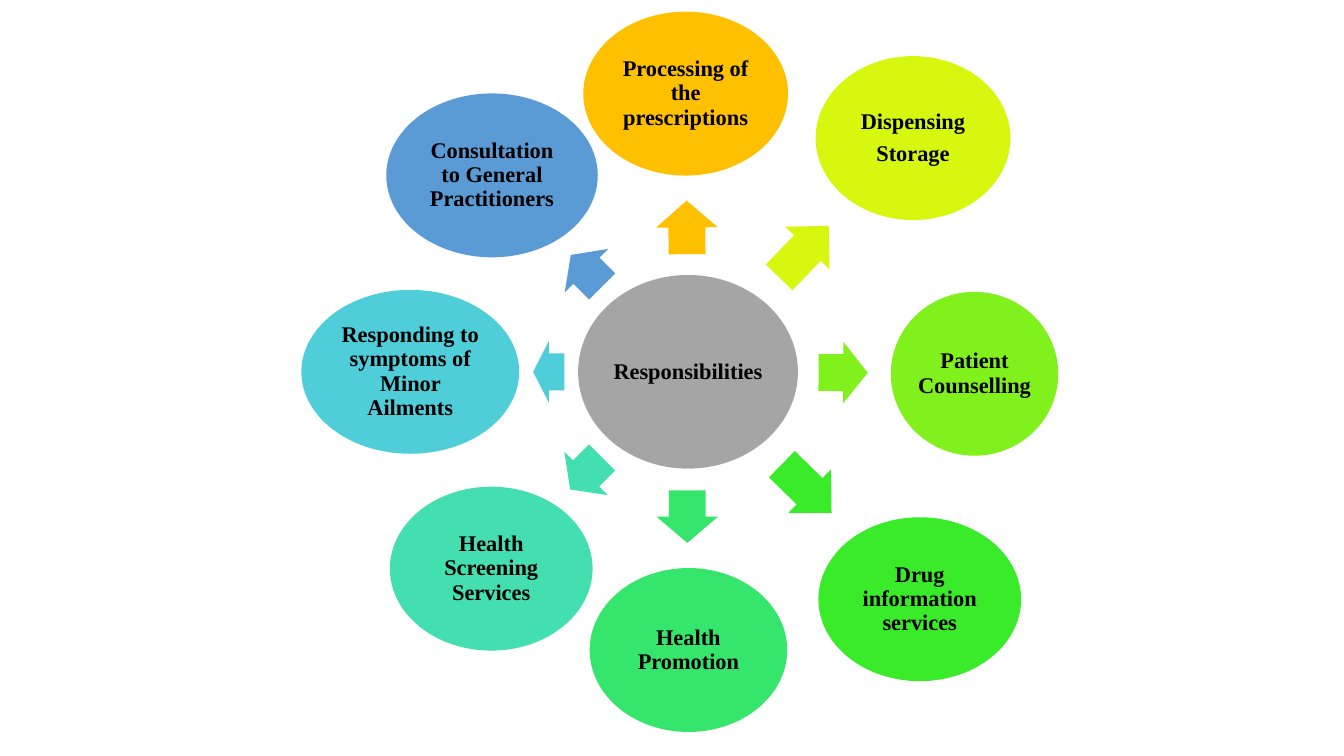
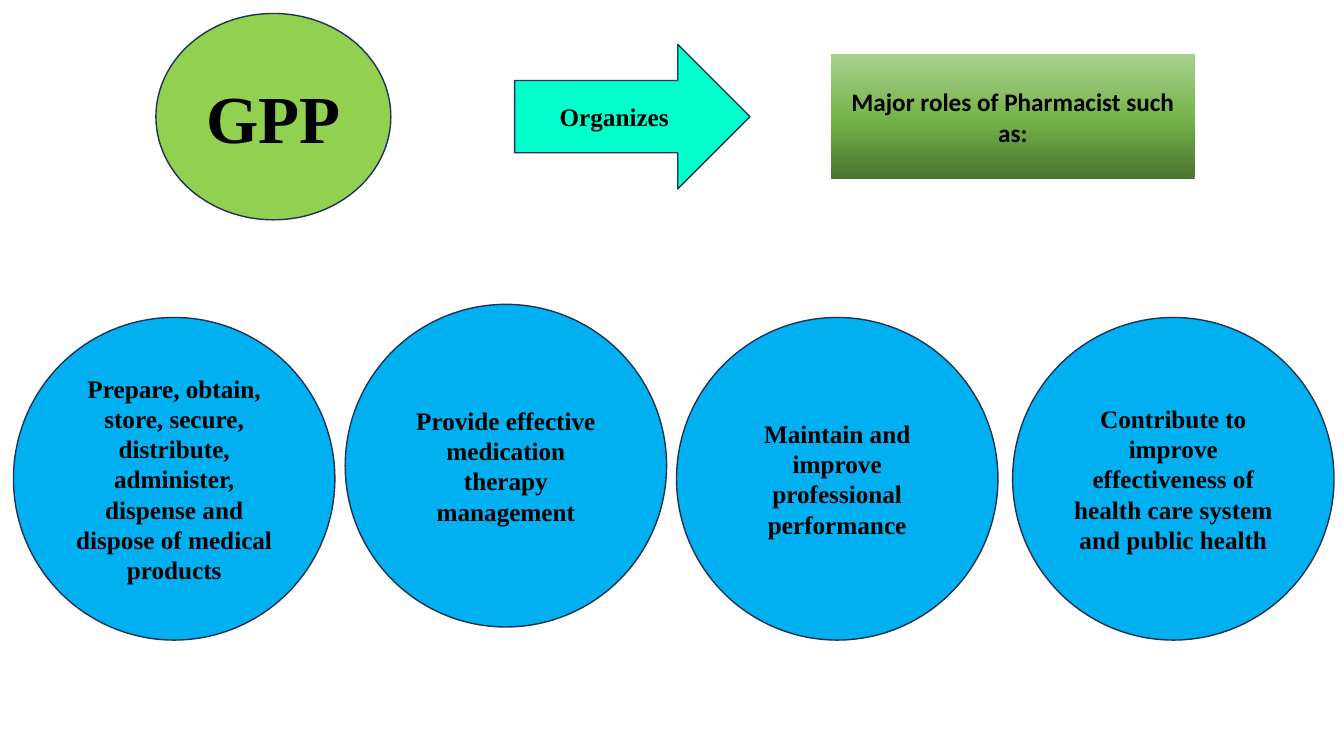
from copy import deepcopy

from pptx import Presentation
from pptx.dml.color import RGBColor
from pptx.enum.shapes import MSO_SHAPE as Preset
from pptx.enum.text import MSO_ANCHOR as Anchor, PP_ALIGN as Align
from pptx.oxml.ns import qn
from pptx.util import Cm, Pt

# Shared look
SERIF = "Times New Roman"
SANS = "Calibri"
BLACK = RGBColor(0x00, 0x00, 0x00)
NAVY = RGBColor(0x1E, 0x32, 0x56)
GREY = RGBColor(0xA5, 0xA5, 0xA5)
AMBER = RGBColor(0xFF, 0xC0, 0x00)
YELLOW = RGBColor(0xD7, 0xF8, 0x0E)
LIME = RGBColor(0x80, 0xF1, 0x1C)
GREEN = RGBColor(0x39, 0xEB, 0x29)
EMERALD = RGBColor(0x36, 0xE5, 0x6C)
TEAL = RGBColor(0x43, 0xDF, 0xB0)
CYAN = RGBColor(0x4F, 0xCE, 0xDA)
BLUE = RGBColor(0x5B, 0x9B, 0xD5)
LEAF = RGBColor(0x92, 0xD0, 0x50)
MINT = RGBColor(0x00, 0xFF, 0xCC)
SKY = RGBColor(0x00, 0xB0, 0xF0)
ROLE_GRADIENT = [
    (0, RGBColor(0x4B, 0x74, 0x30)),
    (0.48, RGBColor(0x74, 0xB3, 0x49)),
    (1, RGBColor(0xA9, 0xD1, 0x8E)),
]

# Responsibilities ring, in cm: text, colour, (centre x, centre y, width),
# then its arrow as (centre x, centre y, length, rotation in degrees)
HUB_CENTRE = (17.34, 9.37)
HUB_SIZE = (5.54, 4.88)
DUTY_HEIGHT = 4.13
ARROW_WIDTH = 1.55
DUTIES = [
    ("Processing of the prescriptions", AMBER,
     (17.28, 2.36, 5.16), (17.31, 5.73, 1.35, 269.6)),
    ("Dispensing\nStorage", YELLOW,
     (23.01, 3.48, 4.91), (20.26, 6.34, 1.8, 313.9)),
    ("Patient Counselling", LIME,
     (24.56, 9.42, 4.22), (21.25, 9.39, 1.24, 0.4)),
    ("Drug information services", GREEN,
     (23.18, 15.1, 5.11), (20.33, 12.31, 1.75, 44.4)),
    ("Health Promotion", EMERALD,
     (17.35, 16.38, 4.98), (17.32, 13.02, 1.32, 90)),
    ("Health Screening Services", TEAL,
     (12.38, 14.33, 5.11), (14.77, 11.93, 1.14, 135)),
    ("Responding to symptoms of Minor Ailments", CYAN,
     (10.34, 9.37, 5.49), (13.83, 9.37, 0.79, 180)),
    ("Consultation to General Practitioners", BLUE,
     (12.4, 4.42, 5.33), (14.78, 6.82, 1.12, 225)),
]

# Pharmacist roles: left and top in cm, text
ROLE_SIZE = (8.1, 8.13)
ROLES = [
    (0.34, 8, "Prepare, obtain, store, secure, distribute, administer, "
              "dispense and dispose of medical products"),
    (8.7, 7.67, "Provide effective medication therapy management"),
    (17.05, 8, "Maintain and improve professional performance"),
    (25.52, 8, "Contribute to improve effectiveness of health care system "
               "and public health"),
]


def add_box(page, preset, left, top, width, height, colour=None, line=None):
    """Add a flat preset shape; lengths are in cm."""
    box = page.shapes.add_shape(
        preset, Cm(left), Cm(top), Cm(width), Cm(height))
    box.shadow.inherit = False
    if colour is not None:
        box.fill.solid()
        box.fill.fore_color.rgb = colour
    if line is None:
        box.line.fill.background()
    else:
        box.line.color.rgb = line
        box.line.width = Pt(1)
    return box


def add_centred(page, preset, centre, size, colour):
    left, top = (c - s / 2 for c, s in zip(centre, size))
    return add_box(page, preset, left, top, *size, colour)


def write(box, text, size, font=SERIF):
    """Fill a shape with bold, centred black text, one paragraph a line."""
    frame = box.text_frame
    frame.word_wrap = True
    frame.vertical_anchor = Anchor.MIDDLE
    frame.text = text
    for para in frame.paragraphs:
        para.alignment = Align.CENTER
        para.font.name = font
        para.font.size = Pt(size)
        para.font.bold = True
        para.font.color.rgb = BLACK


def add_bubble(page, text, centre, size, colour):
    """Add an ellipse of the ring with tight insets and line spacing."""
    bubble = add_centred(page, Preset.OVAL, centre, size, colour)
    write(bubble, text, 16)
    frame = bubble.text_frame
    frame.margin_left = frame.margin_right = Cm(0.06)
    frame.margin_top = frame.margin_bottom = Cm(0.06)
    for para in frame.paragraphs:
        para.line_spacing = 0.9
        para.space_after = Pt(5.6)


def add_ring_arrow(page, x, y, length, rotation, colour):
    arrow = add_centred(
        page, Preset.RIGHT_ARROW, (x, y), (length, ARROW_WIDTH), colour)
    arrow.adjustments[0] = 0.6
    arrow.adjustments[1] = 0.5
    arrow.rotation = rotation


def fill_gradient(box, stops, angle):
    box.fill.gradient()
    box.fill.gradient_angle = angle
    # The default gradient has two stops: add the missing ones
    first = box.fill._xPr.find(".//" + qn("a:gs"))
    for _ in stops[2:]:
        first.addnext(deepcopy(first))
    for stop, (position, colour) in zip(box.fill.gradient_stops, stops):
        stop.position = position
        stop.color.rgb = colour


def build_responsibilities(page):
    add_bubble(page, "Responsibilities", HUB_CENTRE, HUB_SIZE, GREY)
    for text, colour, (x, y, width), arrow in DUTIES:
        add_ring_arrow(page, *arrow, colour)
        add_bubble(page, text, (x, y), (width, DUTY_HEIGHT), colour)


def build_roles(page):
    # Top row
    practice = add_box(page, Preset.OVAL, 3.93, 0.34, 5.92, 5.2, LEAF, NAVY)
    write(practice, "GPP", 48)
    organizes = add_box(
        page, Preset.RIGHT_ARROW, 12.97, 1.12, 5.93, 3.64, MINT, NAVY)
    write(organizes, "Organizes", 18)
    heading = add_box(page, Preset.RECTANGLE, 20.94, 1.37, 9.17, 3.15)
    fill_gradient(heading, ROLE_GRADIENT, 90)
    write(heading, "Major roles of Pharmacist such as:", 18, SANS)

    # Role circles
    for left, top, text in ROLES:
        role = add_box(page, Preset.OVAL, left, top, *ROLE_SIZE, SKY, NAVY)
        write(role, text, 18)


def main():
    deck = Presentation()
    deck.slide_width = Cm(33.87)
    deck.slide_height = Cm(19.05)
    blank = deck.slide_layouts[6]
    for build in (build_responsibilities, build_roles):
        build(deck.slides.add_slide(blank))
    deck.save("out.pptx")


if __name__ == "__main__":
    main()
